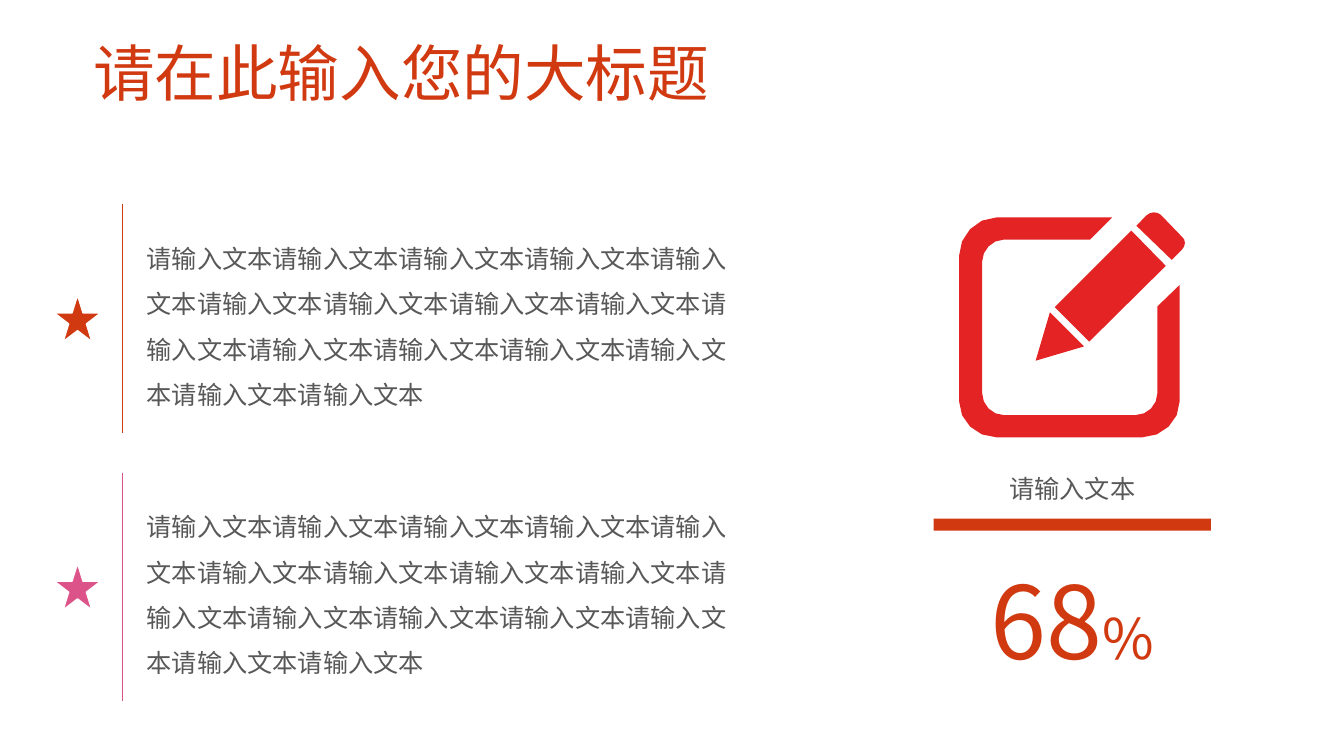
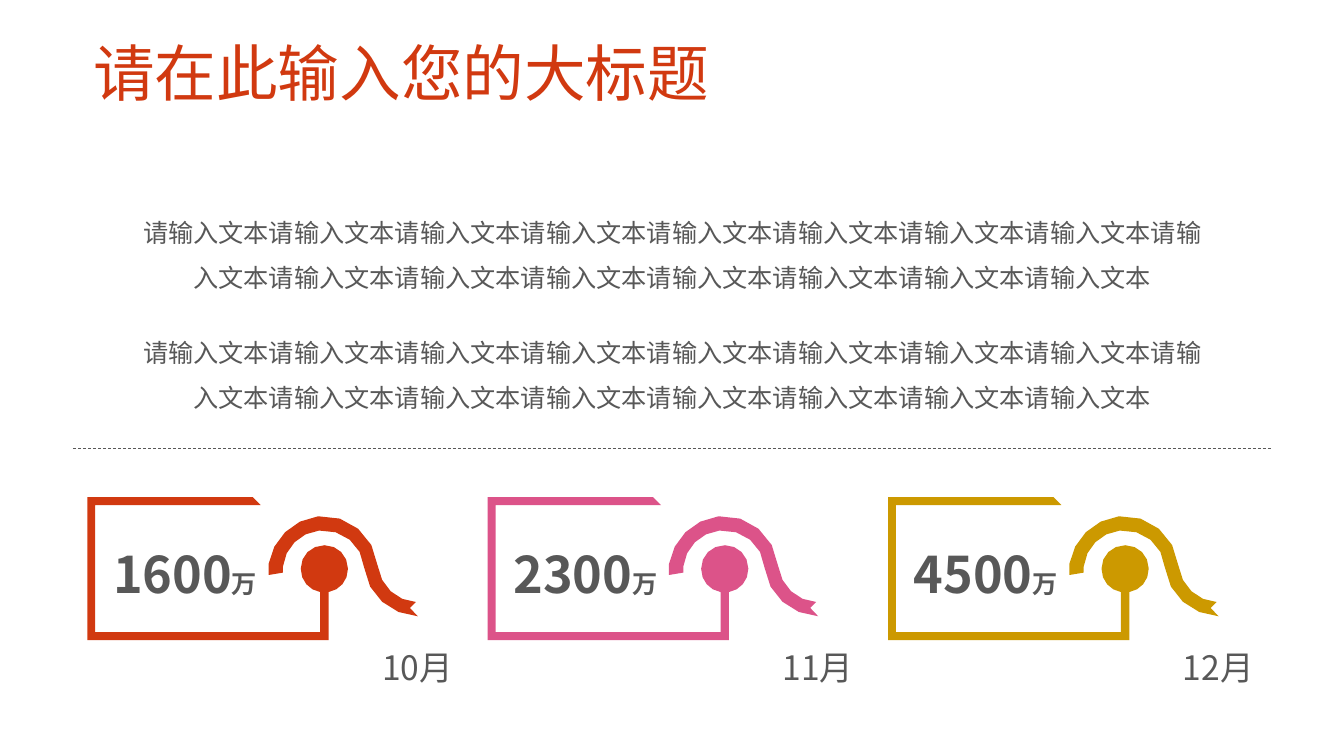
from lxml import etree
from pptx import Presentation
from pptx import util as u
from pptx.dml import color
from pptx.enum import dml, shapes, text
from pptx.oxml import ns

FONT = "Noto Sans CJK SC"
ORANGE, PINK, GOLD, RED = "D13910", "DC5389", "CC9900", "E42424"
GREY, WHITE = "585858", "FFFFFF"
PHRASE = "请输入文本"
BODY = PHRASE * 16

# Outlines are in centimetres: a pair is a corner, six numbers are a Bézier curve.
PENCIL = [
    [(5.61, 0.97), (5.36, 1.22), (4.47, 0.36), (4.72, 0.1),
     (4.83, 0, 4.98, 0, 5.08, 0.08), (5.61, 0.63),
     (5.72, 0.71, 5.72, 0.86, 5.61, 0.97)],
    [(3.28, 3.28), (2.41, 2.41), (4.34, 0.48), (5.21, 1.37)],
    [(3.15, 3.4), (1.93, 3.76), (2.29, 2.54)],
    [(1.12, 0.71), (0.84, 0.71, 0.58, 0.97, 0.58, 1.27), (0.58, 4.57),
     (0.58, 4.88, 0.84, 5.13, 1.12, 5.13), (4.45, 5.13),
     (4.75, 5.13, 5, 4.88, 5, 4.57), (5, 2.39), (5.56, 1.85), (5.56, 4.78),
     (5.56, 5.28, 5.13, 5.69, 4.62, 5.69), (0.94, 5.69),
     (0.43, 5.69, 0, 5.28, 0, 4.78), (0, 1.12),
     (0, 0.61, 0.43, 0.15, 0.94, 0.15), (3.86, 0.15), (3.3, 0.71)],
]
RIBBON = [
    [(8.33, 3), (7.65, 2.97, 7.06, 2.46, 6.98, 1.78),
     (6.93, 1.19, 6.43, 0.79, 5.84, 0.84),
     (5.36, 0.89, 4.98, 1.27, 4.93, 1.75), (4.93, 1.9), (4.57, 1.96),
     (4.57, 1.68), (4.67, 1.07, 5.16, 0.56, 5.82, 0.48),
     (6.58, 0.41, 7.24, 0.97, 7.32, 1.73),
     (7.39, 2.24, 7.8, 2.62, 8.28, 2.64), (8.13, 2.79)],
]
FRAME = [
    [(0, 0), (4.17, 0), (4.37, 0.2), (0.2, 0.2), (0.2, 3.4), (5.87, 3.4),
     (5.87, 2.39), (5.59, 2.34, 5.38, 2.11, 5.38, 1.8),
     (5.38, 1.47, 5.64, 1.21, 5.98, 1.21),
     (6.31, 1.21, 6.57, 1.47, 6.57, 1.8),
     (6.57, 2.11, 6.36, 2.34, 6.08, 2.39), (6.08, 3.6), (0, 3.6)],
]


def rgb(value):
    """Turn a hex string into a colour."""
    return color.RGBColor.from_string(value)


def add_text(s, runs, x, y, w, h, size=18, fill=GREY, bold=False, align="LEFT",
             anchor="MIDDLE", spacing=None, inset=None):
    """Add a one-paragraph text box; runs is a string or (text, size) pairs."""
    tf = s.shapes.add_textbox(u.Cm(x), u.Cm(y), u.Cm(w), u.Cm(h)).text_frame
    tf.word_wrap = True
    tf.vertical_anchor = text.MSO_ANCHOR[anchor]
    if inset is not None:
        tf.margin_left = tf.margin_right = u.Cm(inset)
        tf.margin_top = tf.margin_bottom = u.Cm(inset)
    p = tf.paragraphs[0]
    p.alignment = text.PP_ALIGN[align]
    p.line_spacing = spacing
    for words, points in [(runs, size)] if isinstance(runs, str) else runs:
        r = p.add_run()
        r.text = words
        r.font.size = u.Pt(points)
        r.font.bold = bold
        r.font.name = FONT
        r.font.color.rgb = rgb(fill)
        ea = etree.SubElement(r.font._element, ns.qn("a:ea"))
        ea.set("typeface", FONT)


def paint(sp, fill, line=None):
    """Give a shape a flat fill and an optional thin outline."""
    sp.shadow.inherit = False
    sp.fill.solid()
    sp.fill.fore_color.rgb = rgb(fill)
    if line:
        sp.line.color.rgb = rgb(line)
        sp.line.width = u.Pt(1)
    else:
        sp.line.fill.background()


def add_preset(s, kind, x, y, w, h, fill, line=None):
    """Add a painted preset shape."""
    sp = s.shapes.add_shape(shapes.MSO_SHAPE[kind], u.Cm(x), u.Cm(y), u.Cm(w), u.Cm(h))
    paint(sp, fill, line)


def add_line(s, x1, y1, x2, y2, fill, dash=None):
    """Add a thin straight line without theme effects."""
    c = s.shapes.add_connector(shapes.MSO_CONNECTOR.STRAIGHT,
                               u.Cm(x1), u.Cm(y1), u.Cm(x2), u.Cm(y2))
    c.line.color.rgb = rgb(fill)
    c.line.width = u.Pt(0.5)
    if dash:
        c.line.dash_style = dash
    etree.SubElement(c._element.spPr, ns.qn("a:effectLst"))
    c._element.remove(c._element.find(ns.qn("p:style")))


def flatten(contour, steps=4):
    """Return the contour's points in thousandths of a centimetre."""
    points = []
    for node in contour:
        if len(node) == 2:
            points.append(node)
            continue
        controls = [points[-1], node[:2], node[2:4], node[4:]]
        for i in range(1, steps + 1):
            t = i / steps
            weights = ((1 - t) ** 3, 3 * t * (1 - t) ** 2, 3 * t * t * (1 - t), t ** 3)
            points.append(tuple(sum(k * c[axis] for k, c in zip(weights, controls))
                                for axis in (0, 1)))
    return [(a * 1000, b * 1000) for a, b in points]


def add_outline(s, contours, x, y, fill):
    """Add one painted freeform made of closed contours."""
    first, *others = [flatten(contour) for contour in contours]
    builder = s.shapes.build_freeform(*first[0], scale=u.Cm(0.001))
    builder.add_line_segments(first[1:])
    for points in others:
        builder.move_to(*points[0])
        builder.add_line_segments(points[1:])
    paint(builder.convert_to_shape(u.Cm(x), u.Cm(y)), fill)


def add_slide(prs):
    """Add a blank slide with the shared title."""
    s = prs.slides.add_slide(prs.slide_layouts[6])
    add_text(s, "请在此输入您的大标题", 2.1, 0.3, 29.67, 2.59, size=44, fill=ORANGE,
             anchor="BOTTOM", spacing=0.9)
    return s


def add_star_row(s, y, fill):
    """Add a star, a vertical rule and a body text."""
    add_text(s, BODY, 3.45, y + 0.04, 15.27, 5.69, spacing=1.5)
    add_preset(s, "STAR_5_POINT", 1.37, y + 2.29, 1.17, 1.17, fill, WHITE)
    add_line(s, 3.09, y, 3.09, y + 5.76, fill)


def add_month(s, x, y, amount, month, fill):
    """Add a ribbon and frame with an amount and its month."""
    add_outline(s, RIBBON, x, y, fill)
    add_outline(s, FRAME, x, y, fill)
    add_text(s, [(amount, 36), ("万", 18)], x + 0.08, y + 1.02, 4.45, 1.8,
             bold=True, align="RIGHT", anchor="TOP")
    add_text(s, month, x + 6.79, y + 3.34, 3.07, 1.35, size=24, align="CENTER", spacing=1.5)


def build_share(prs):
    """Build the slide with two texts and a percentage."""
    s = add_slide(prs)
    for i, fill in enumerate((ORANGE, PINK)):
        add_star_row(s, 5.15 + 6.76 * i, fill)
    x, w = 23.53, 6.99
    add_outline(s, PENCIL, 24.17, 5.33, RED)
    add_text(s, PHRASE, x, 11.4, w, 1.42, align="CENTER", spacing=1.5)
    add_preset(s, "RECTANGLE", x, 13.07, w, 0.3, ORANGE)
    add_text(s, [("68", 72), ("%", 40)], x, 14.07, w, 3.07, fill=ORANGE,
             align="CENTER", anchor="TOP", inset=0)


def build_months(prs):
    """Build the slide with three monthly amounts."""
    s = add_slide(prs)
    for i in range(2):
        add_text(s, BODY, 3.16, 4.93 + 3.01 * i, 27.56, 2.62, align="CENTER", spacing=1.5)
    add_line(s, 1.84, 11.3, 32.04, 11.3, GREY, dml.MSO_LINE.DASH)
    months = [("1600", "10月", ORANGE), ("2300", "11月", PINK), ("4500", "12月", GOLD)]
    for i, (amount, month, fill) in enumerate(months):
        add_month(s, 2.2 + 10.09 * i, 12.53, amount, month, fill)


def main():
    """Build and save the presentation."""
    prs = Presentation()
    prs.slide_width, prs.slide_height = u.Cm(33.87), u.Cm(19.05)
    build_share(prs)
    build_months(prs)
    prs.save("out.pptx")


if __name__ == "__main__":
    main()
